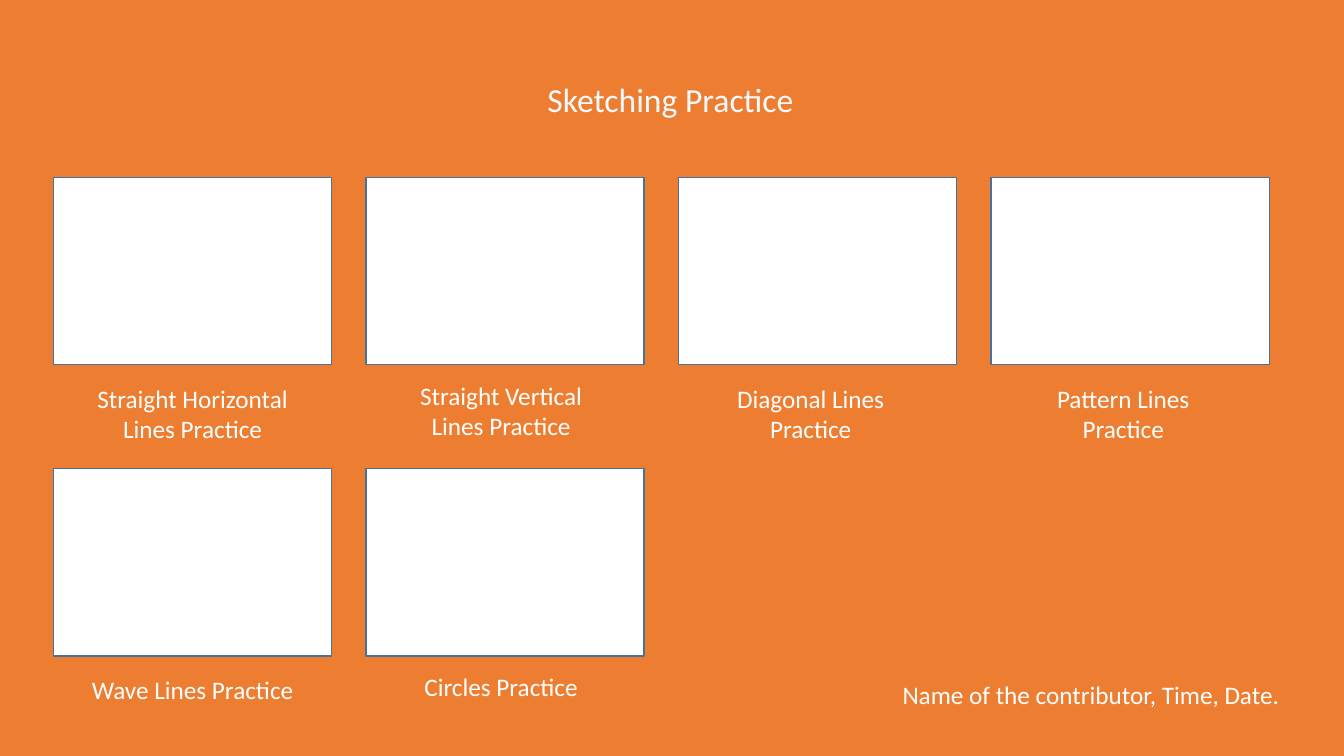
from pptx import Presentation
from pptx.dml.color import RGBColor
from pptx.enum.shapes import MSO_SHAPE
from pptx.enum.text import MSO_ANCHOR, PP_ALIGN
from pptx.util import Inches, Pt

RECTANGLE = MSO_SHAPE.RECTANGLE
TOP = MSO_ANCHOR.TOP
CENTER = PP_ALIGN.CENTER

# Content
TITLE = "Sketching Practice"
PRACTICES = [
    ["Straight Horizontal Lines Practice", "Straight Vertical Lines Practice",
     "Diagonal Lines Practice", "Pattern Lines Practice"],
    ["Wave Lines Practice", "Circles Practice"],
]
CREDIT = "Name of the contributor, Time, Date."

# Style and grid, in inches
COLORS = {"background": "ED7D31", "title": "F5F9FC", "text": "FFFFFF",
          "frame": "FFFFFF", "outline": "43739E"}
FONT = "Calibri"
GRID_LEFT, GRID_TOP = 0.53, 1.76
COLUMN_STEP, ROW_STEP = 3.1, 2.89
FRAME_WIDTH, FRAME_HEIGHT = 2.76, 1.86
CAPTION_WIDTH = 2.34
CAPTION_HEIGHTS = [0.71, 0.4]
CAPTION_OFFSETS = [(0.21, 1.99), (0.17, 1.96), (0.14, 1.99), (0.14, 1.99)]


def color(name):
    return RGBColor.from_string(COLORS[name])


def write(holder, text, size, color_name, wrap=True):
    frame = holder.text_frame
    frame.text = text
    frame.word_wrap = wrap
    frame.vertical_anchor = TOP
    paragraph = frame.paragraphs[0]
    paragraph.alignment = CENTER
    paragraph.line_spacing = 1.0
    paragraph.space_before = Pt(0)
    paragraph.font.name = FONT
    paragraph.font.size = Pt(size)
    paragraph.font.color.rgb = color(color_name)


def add_label(slide, text, left, top, width, height):
    label = slide.shapes.add_textbox(
        Inches(left), Inches(top), Inches(width), Inches(height))
    write(label, text, 18, "text")


def add_frame(slide, left, top):
    frame = slide.shapes.add_shape(
        RECTANGLE, Inches(left), Inches(top),
        Inches(FRAME_WIDTH), Inches(FRAME_HEIGHT))
    frame.shadow.inherit = False
    frame.fill.solid()
    frame.fill.fore_color.rgb = color("frame")
    frame.line.color.rgb = color("outline")
    frame.line.width = Pt(1)


def main():
    deck = Presentation()
    deck.slide_width, deck.slide_height = Inches(13.33), Inches(7.5)
    slide = deck.slides.add_slide(deck.slide_layouts.get_by_name("Title Only"))
    slide.background.fill.solid()
    slide.background.fill.fore_color.rgb = color("background")

    # Title
    title = slide.shapes.title
    title.left, title.top = Inches(5.26), Inches(0.73)
    title.width, title.height = Inches(2.78), Inches(0.5)
    write(title, TITLE, 24, "title", wrap=False)

    # Practice frames with captions
    for row, captions in enumerate(PRACTICES):
        top = GRID_TOP + row * ROW_STEP
        for column, caption in enumerate(captions):
            left = GRID_LEFT + column * COLUMN_STEP
            shift_x, shift_y = CAPTION_OFFSETS[column]
            add_frame(slide, left, top)
            add_label(slide, caption, left + shift_x, top + shift_y,
                      CAPTION_WIDTH, CAPTION_HEIGHTS[row])

    # Contributor line
    add_label(slide, CREDIT, 8.82, 6.69, 4, 0.4)

    deck.save("out.pptx")


if __name__ == "__main__":
    main()
